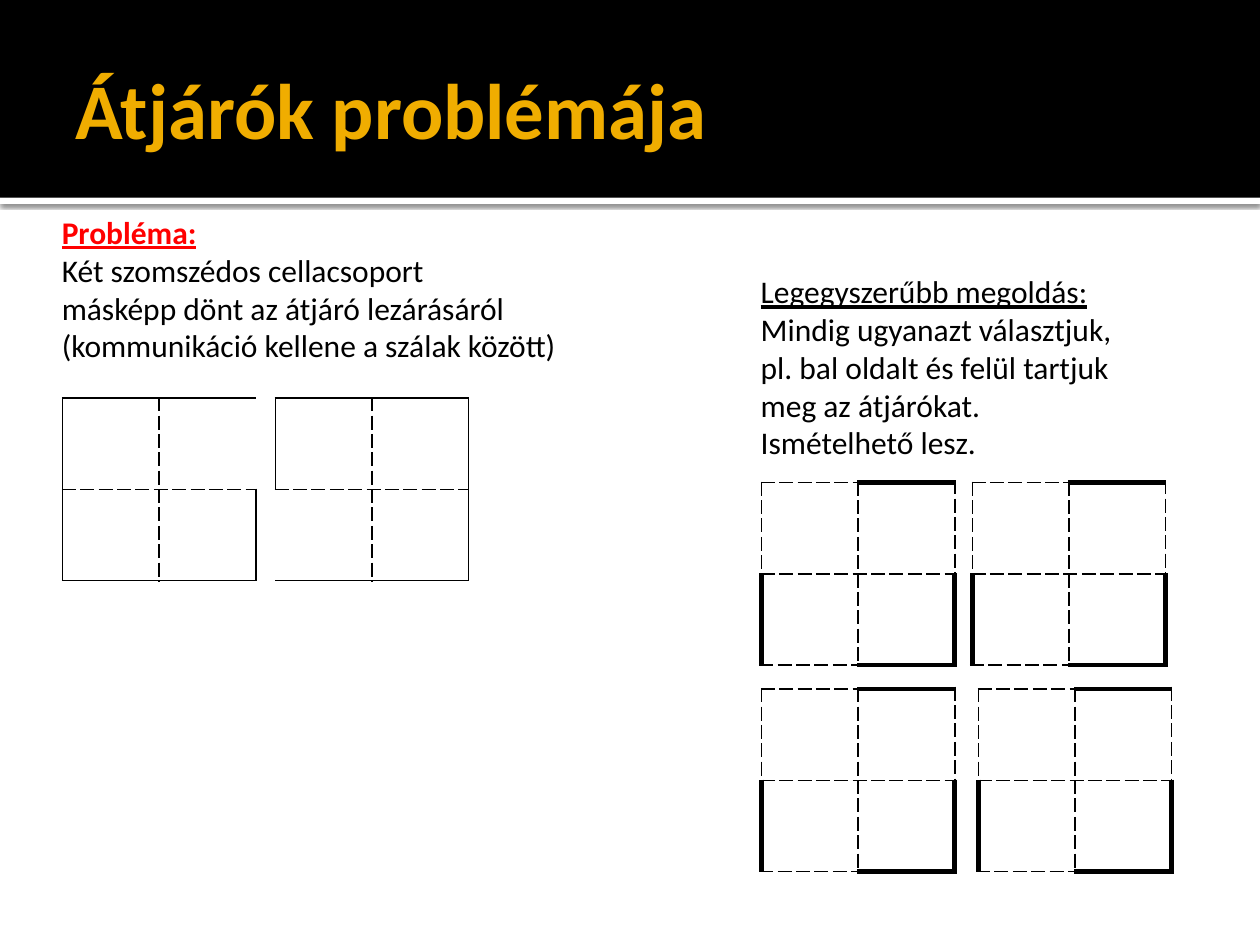
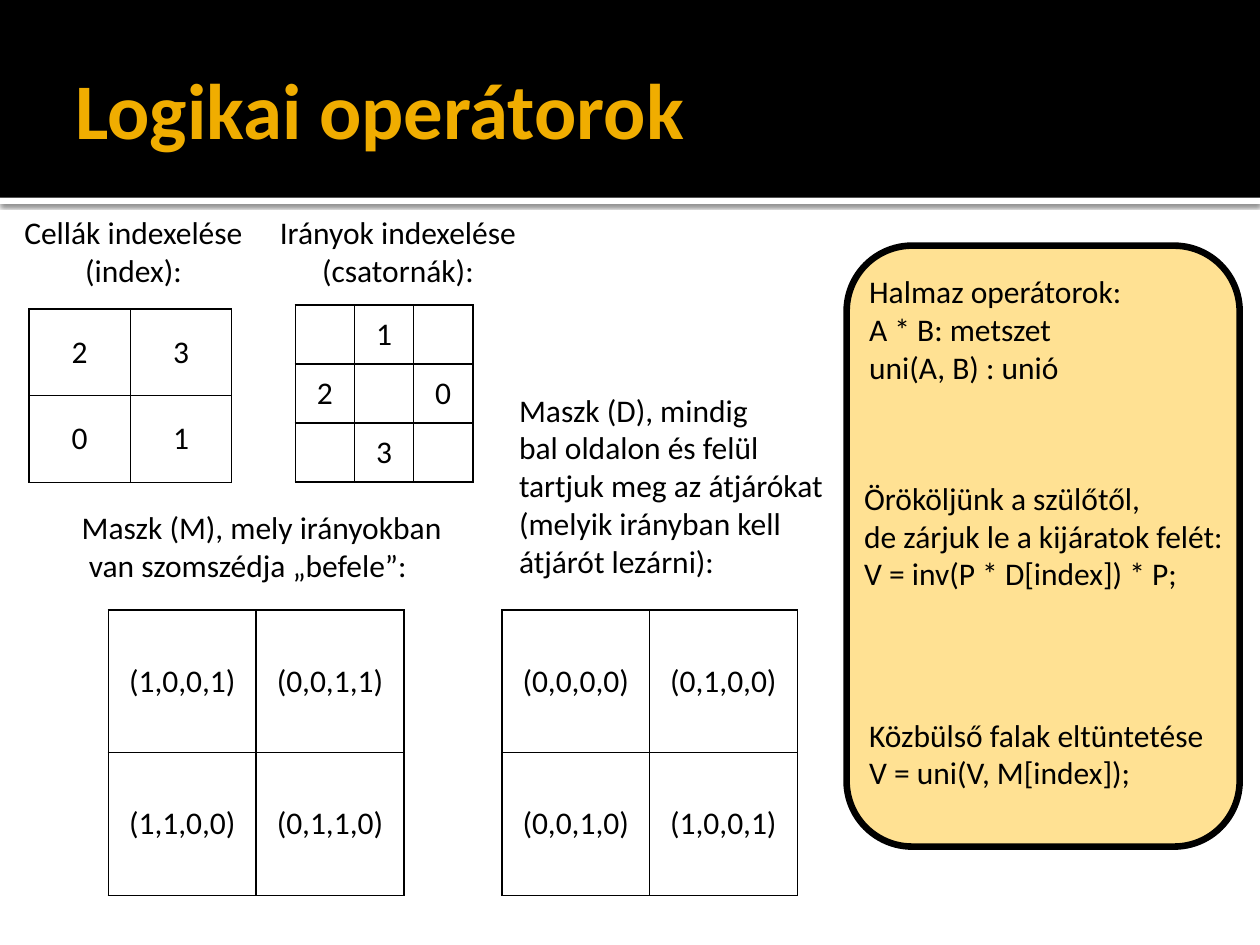
from lxml import etree
from pptx import Presentation
from pptx import util as u
from pptx.dml.color import RGBColor
from pptx.enum import shapes, text
from pptx.oxml import ns

Pt = u.Pt
BLACK = RGBColor(0x00, 0x00, 0x00)
WHITE = RGBColor(0xFF, 0xFF, 0xFF)
GOLD = RGBColor(0xF0, 0xAD, 0x00)
RED = RGBColor(0xFF, 0x00, 0x00)
CREAM = RGBColor(0xFF, 0xE1, 0x93)
FONT = "Calibri"
SLIDE_W, SLIDE_H, BAND_H = 720, 540, 113
LEFT, CENTER = text.PP_ALIGN.LEFT, text.PP_ALIGN.CENTER

SIDES = ("lnL", "lnR", "lnT", "lnB")
WALLS = {"s": (1, "solid"), "d": (1, "dash"), "T": (3, "solid")}
BOXED = "ssss"
LEFT_GROUP = [["sdsd", "d-sd"], ["sdds", "dsds"]]
RIGHT_GROUP = [["sdsd", "dssd"], ["-dds", "dsds"]]
SOLVED_GROUP = [["dddd", "ddTd"], ["Tddd", "dTdT"]]
GROUP_CELL = (55.2, 52.2)


def write(frame, lines, size=18, color=BLACK, bold=False, align=LEFT, heading=None):
    """Fill a text frame with one paragraph a line; heading overrides the first line."""
    for number, line in enumerate(lines):
        paragraph = frame.paragraphs[0] if number == 0 else frame.add_paragraph()
        paragraph.alignment = align
        run = paragraph.add_run()
        run.text = line
        look = (heading or {}) if number == 0 else {}
        run.font.name = FONT
        run.font.size = Pt(size)
        run.font.bold = look.get("bold", bold)
        run.font.underline = look.get("underline", False)
        run.font.color.rgb = look.get("color", color)


def add_label(slide, left, top, width, lines, **look):
    """Add an unwrapped text box as tall as its lines."""
    height = 7.2 + 21.8 * len(lines)
    frame = slide.shapes.add_textbox(Pt(left), Pt(top), Pt(width), Pt(height)).text_frame
    frame.word_wrap = False
    frame.auto_size = text.MSO_AUTO_SIZE.SHAPE_TO_FIT_TEXT
    write(frame, lines, **look)


def add_block(slide, kind, left, top, width, height, fill):
    """Add a filled shape with neither line nor shadow."""
    block = slide.shapes.add_shape(kind, Pt(left), Pt(top), Pt(width), Pt(height))
    block.shadow.inherit = False
    block.fill.solid()
    block.fill.fore_color.rgb = fill
    block.line.fill.background()
    return block


def draw_walls(cell, walls):
    """Set the left, right, top and bottom borders of a cell from four letters."""
    properties = cell._tc.get_or_add_tcPr()
    for place, (side, wall) in enumerate(zip(SIDES, walls)):
        line = etree.Element(ns.qn(f"a:{side}"))
        properties.insert(place, line)
        if wall not in WALLS:
            etree.SubElement(line, ns.qn("a:noFill"))
            continue
        width, dash = WALLS[wall]
        line.set("w", str(Pt(width)))
        paint = etree.SubElement(line, ns.qn("a:solidFill"))
        etree.SubElement(paint, ns.qn("a:srgbClr"), val=str(BLACK))
        etree.SubElement(line, ns.qn("a:prstDash"), val=dash)


def add_grid(slide, left, top, cell_size, values=None, walls=None):
    """Add a table of equal cells with centred values and the given walls."""
    width, height = cell_size
    shape = values or walls
    rows, columns = len(shape), len(shape[0])
    table = slide.shapes.add_table(rows, columns, Pt(left), Pt(top),
                                   Pt(width * columns), Pt(height * rows)).table
    table.first_row = table.horz_banding = False
    for column in table.columns:
        column.width = Pt(width)
    for r, row in enumerate(table.rows):
        row.height = Pt(height)
        for c, cell in enumerate(row.cells):
            cell.fill.background()
            cell.vertical_anchor = text.MSO_ANCHOR.MIDDLE
            draw_walls(cell, walls[r][c] if walls else BOXED)
            if values and values[r][c]:
                write(cell.text_frame, [values[r][c]], align=CENTER)


def add_titled_slide(deck, title):
    """Add a slide with the black band, its shadowed white rule and the title."""
    slide = deck.slides.add_slide(deck.slide_layouts[5])
    rule = add_block(slide, shapes.MSO_SHAPE.RECTANGLE, 0, BAND_H, SLIDE_W, 3.6, WHITE)
    effects = rule._element.spPr.find(ns.qn("a:effectLst"))
    shadow = etree.SubElement(effects, ns.qn("a:outerShdw"), blurRad=str(Pt(2.5)),
                              dist=str(Pt(0.8)), dir="5400000", rotWithShape="0")
    tint = etree.SubElement(shadow, ns.qn("a:srgbClr"), val=str(BLACK))
    etree.SubElement(tint, ns.qn("a:alpha"), val="60000")
    add_block(slide, shapes.MSO_SHAPE.RECTANGLE, 0, 0, SLIDE_W, BAND_H, BLACK)

    heading = slide.shapes.title
    slide.shapes._spTree.append(heading._element)
    heading.left, heading.top = Pt(36), Pt(12.2)
    heading.width, heading.height = Pt(648), Pt(98.6)
    frame = heading.text_frame
    frame.auto_size = text.MSO_AUTO_SIZE.NONE
    frame.vertical_anchor = text.MSO_ANCHOR.MIDDLE
    frame.margin_left = Pt(7.2)
    frame.margin_top = frame.margin_right = frame.margin_bottom = Pt(3.6)
    write(frame, [title], size=45, color=GOLD, bold=True)
    return slide


def add_problem(slide, left, top):
    """Describe the conflict above two cell groups that disagree."""
    add_label(slide, left, top, 300, [
        "Probléma:",
        "Két szomszédos cellacsoport",
        "másképp dönt az átjáró lezárásáról",
        "(kommunikáció kellene a szálak között)",
    ], heading={"color": RED, "bold": True, "underline": True})
    for offset, walls in ((7.6, LEFT_GROUP), (129.2, RIGHT_GROUP)):
        add_grid(slide, left + offset, top + 109.2, GROUP_CELL, walls=walls)


def add_solution(slide, left, top):
    """Describe the fixed choice above four identical cell groups."""
    add_label(slide, left, top, 217.4, [
        "Legegyszerűbb megoldás:",
        "Mindig ugyanazt választjuk,",
        "pl. bal oldalt és felül tartjuk",
        "meg az átjárókat.",
        "Ismételhető lesz.",
    ], heading={"underline": True})
    for x, y in ((7.6, 123.7), (128, 123.7), (7.6, 241.7), (131.5, 241.7)):
        add_grid(slide, left + x, top + y, GROUP_CELL, walls=SOLVED_GROUP)


def add_indexing(slide, left, top):
    """Show how cells and directions are numbered."""
    add_label(slide, left, top, 141, ["Cellák indexelése", "(index):"], align=CENTER)
    add_grid(slide, left + 10.8, top + 58.4, (57.9, 49.5), [["2", "3"], ["0", "1"]])
    add_label(slide, left + 146, top, 151.2, ["Irányok indexelése", "(csatornák):"],
              align=CENTER)
    add_grid(slide, left + 163, top + 56, (33.8, 33.8),
             [["", "1", ""], ["2", "", "0"], ["", "3", ""]])


def add_masks(slide, left, top):
    """Show the neighbour mask and the gateway mask side by side."""
    mask_cell = (84.4, 81.5)
    add_label(slide, left - 22.4, top - 62, 222.5,
              ["Maszk (M), mely irányokban", " van szomszédja „befele”:"])
    add_grid(slide, left, top, mask_cell,
             [["(1,0,0,1)", "(0,0,1,1)"], ["(1,1,0,0)", "(0,1,1,0)"]])
    add_label(slide, left + 227.5, top - 129, 193.7, [
        "Maszk (D), mindig",
        "bal oldalon és felül",
        "tartjuk meg az átjárókat",
        "(melyik irányban kell",
        "átjárót lezárni):",
    ])
    add_grid(slide, left + 224.8, top, mask_cell,
             [["(0,0,0,0)", "(0,1,0,0)"], ["(0,0,1,0)", "(1,0,0,1)"]])


def add_operator_panel(slide, left, top, width, height):
    """Draw the rounded panel listing the set operators and formulas."""
    panel = add_block(slide, shapes.MSO_SHAPE.ROUNDED_RECTANGLE,
                      left, top, width, height, CREAM)
    panel.line.color.rgb = BLACK
    panel.line.width = Pt(3.78)
    notes = (
        (5.8, 11.5, 160.6, ["Halmaz operátorok:", "A * B: metszet", "uni(A, B) : unió"]),
        (2.9, 129.6, 221.8, ["Örököljünk a szülőtől,", "de zárjuk le a kijáratok felét:",
                             "V = inv(P * D[index]) * P;"]),
        (5.8, 265, 208, ["Közbülső falak eltüntetése", "V = uni(V, M[index]);"]),
    )
    for x, y, note_width, lines in notes:
        add_label(slide, left + x, top + y, note_width, lines)


def main():
    """Build both slides and save the deck."""
    deck = Presentation()
    deck.slide_width, deck.slide_height = Pt(SLIDE_W), Pt(SLIDE_H)

    gateways = add_titled_slide(deck, "Átjárók problémája")
    add_problem(gateways, 28.2, 118.2)
    add_solution(gateways, 427.6, 152)

    operators = add_titled_slide(deck, "Logikai operátorok")
    add_operator_panel(operators, 483.8, 140.4, 224.6, 343.4)
    add_indexing(operators, 5.8, 118.2)
    add_masks(operators, 62, 348.6)

    deck.save("out.pptx")


if __name__ == "__main__":
    main()
